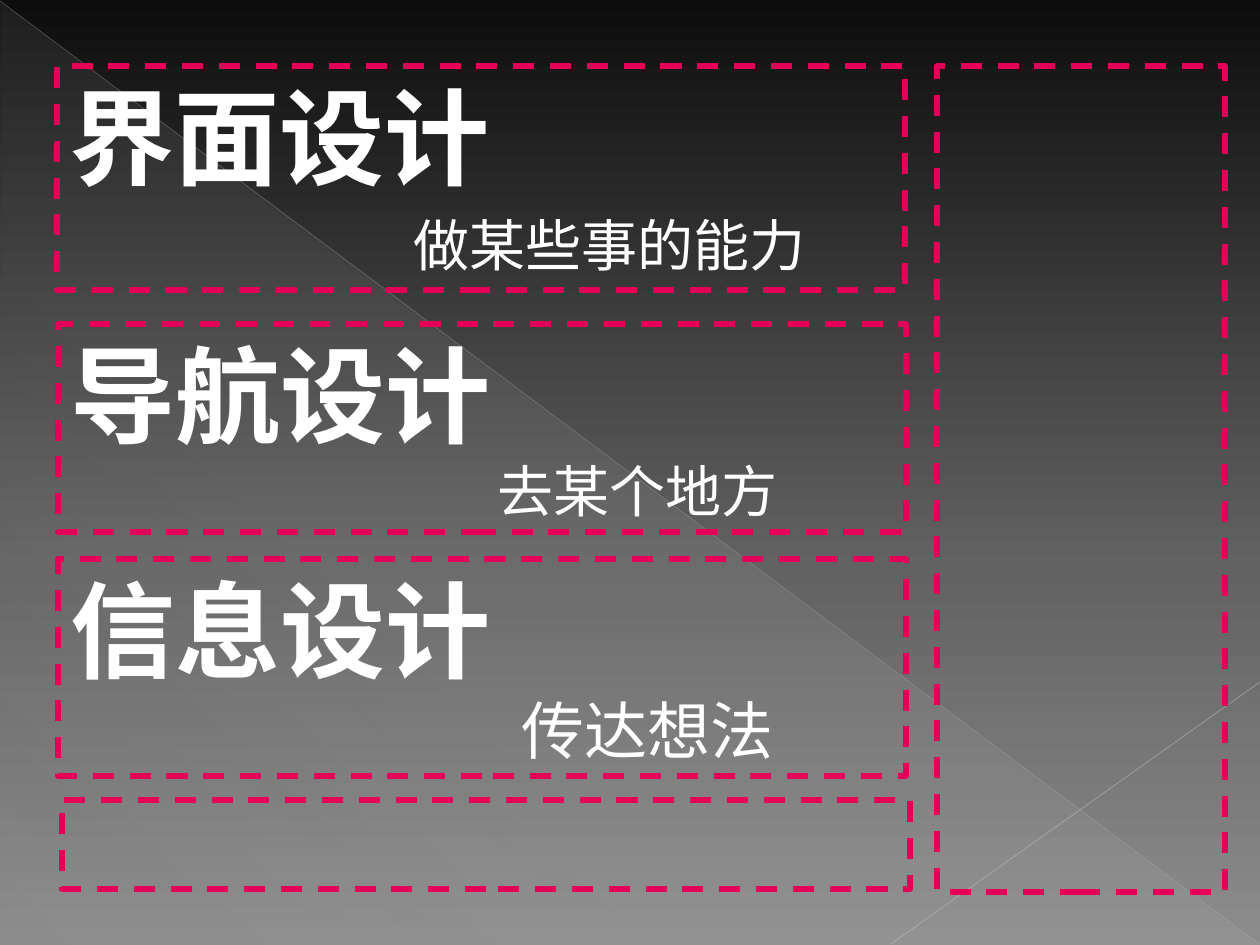
import pptx
import pptx.dml.color
import pptx.enum.dml
import pptx.enum.shapes
import pptx.enum.text
import pptx.util
from lxml import etree
from pptx.oxml.ns import qn

COLORS = {
    "top": "0D0D0D", "middle": "626262", "bottom": "8C8C8C", "sheen": "D2D2D2",
    "long_line": "BFBFBF", "short_line": "C6C6C6", "frame": "E40059", "text": "FFFFFF",
}
PX_PER_INCH = 126


def px(length):
    return pptx.util.Emu(round(length * 914400 / PX_PER_INCH))


def rgb(name):
    return pptx.dml.color.RGBColor.from_string(COLORS[name])


def set_alpha(parent, percent):
    color = parent.find(".//" + qn("a:srgbClr"))
    etree.SubElement(color, qn("a:alpha"), val=str(percent * 1000))


class SlideBuilder:
    font = "League Spartan"
    frame_width = 3

    def __init__(self, slide):
        self.slide = slide

    def gradient(self, fill, owner, stops, angle):
        """Fill with (position, color, opacity) stops; owner holds the fill's XML."""
        fill.gradient()
        gradient = owner.find(".//" + qn("a:gradFill"))
        for child in list(gradient):
            gradient.remove(child)
        stop_list = etree.SubElement(gradient, qn("a:gsLst"))
        for position, color, opacity in stops:
            stop = etree.SubElement(stop_list, qn("a:gs"), pos=str(position * 1000))
            etree.SubElement(stop, qn("a:srgbClr"), val=COLORS[color])
            if opacity < 100:
                set_alpha(stop, opacity)
        etree.SubElement(gradient, qn("a:lin"), ang=str(angle * 60000), scaled="0")

    def background(self, stops, angle):
        self.gradient(self.slide.background.fill, self.slide.element, stops, angle)

    def shape(self, kind, left, top, width, height):
        shape = self.slide.shapes.add_shape(kind, px(left), px(top), px(width), px(height))
        shape.shadow.inherit = False
        return shape

    def sheen(self, left, top, width, height, stops, angle):
        triangle = self.shape(pptx.enum.shapes.MSO_SHAPE.RIGHT_TRIANGLE,
                              left, top, width, height)
        self.gradient(triangle.fill, triangle.element.spPr, stops, angle)
        triangle.line.fill.background()

    def line(self, start, end, color, width, opacity):
        line = self.slide.shapes.add_connector(
            pptx.enum.shapes.MSO_CONNECTOR.STRAIGHT, *map(px, start + end))
        line.line.color.rgb = rgb(color)
        line.line.width = pptx.util.Pt(width)
        properties = line.element.spPr
        set_alpha(properties, opacity)
        etree.SubElement(properties, qn("a:effectLst"))

    def frame(self, left, top, width, height):
        frame = self.shape(pptx.enum.shapes.MSO_SHAPE.RECTANGLE, left, top, width, height)
        frame.fill.background()
        frame.line.color.rgb = rgb("frame")
        frame.line.width = pptx.util.Pt(self.frame_width)
        frame.line.dash_style = pptx.enum.dml.MSO_LINE.DASH
        return frame

    def topic(self, box, title, caption, size, indent, gap=0):
        """Frame with a bold title and an indented caption below it."""
        text_frame = self.frame(*box).text_frame
        text_frame.word_wrap = True
        text_frame.vertical_anchor = pptx.enum.text.MSO_ANCHOR.TOP
        text_frame.text = f"{title}\n{caption}"
        for para, points, bold in zip(text_frame.paragraphs, (60, size), (True, False)):
            para.alignment = pptx.enum.text.PP_ALIGN.LEFT
            font = para.runs[0].font
            font.name = self.font
            font.size = pptx.util.Pt(points)
            font.bold = bold
            font.color.rgb = rgb("text")
        para = text_frame.paragraphs[1]
        para.space_before = pptx.util.Pt(gap)
        para._p.get_or_add_pPr().set("marL", str(px(indent)))


def main():
    deck = pptx.Presentation()
    deck.slide_width, deck.slide_height = px(1260), px(945)
    page = SlideBuilder(deck.slides.add_slide(deck.slide_layouts[6]))

    page.background([(0, "top", 100), (60, "middle", 100), (100, "bottom", 100)], 90)
    page.sheen(1, 2, 1258, 943,
               [(0, "sheen", 10), (70, "sheen", 8), (100, "sheen", 1)], 133)
    page.line((0, 1), (1259, 944), "long_line", 0.39, 35)
    page.line((1260, 682), (891, 944), "short_line", 0.47, 45)

    page.topic((57, 66, 848, 224), "界面设计", "做某些事的能力", 32, 344, gap=7)
    page.topic((58, 324, 848, 208), "导航设计", "去某个地方", 32, 427)
    page.topic((58, 559, 848, 217), "信息设计", "传达想法", 36, 451)
    page.frame(937, 66, 288, 826)
    page.frame(62, 800, 848, 89)

    deck.save("out.pptx")


if __name__ == "__main__":
    main()
